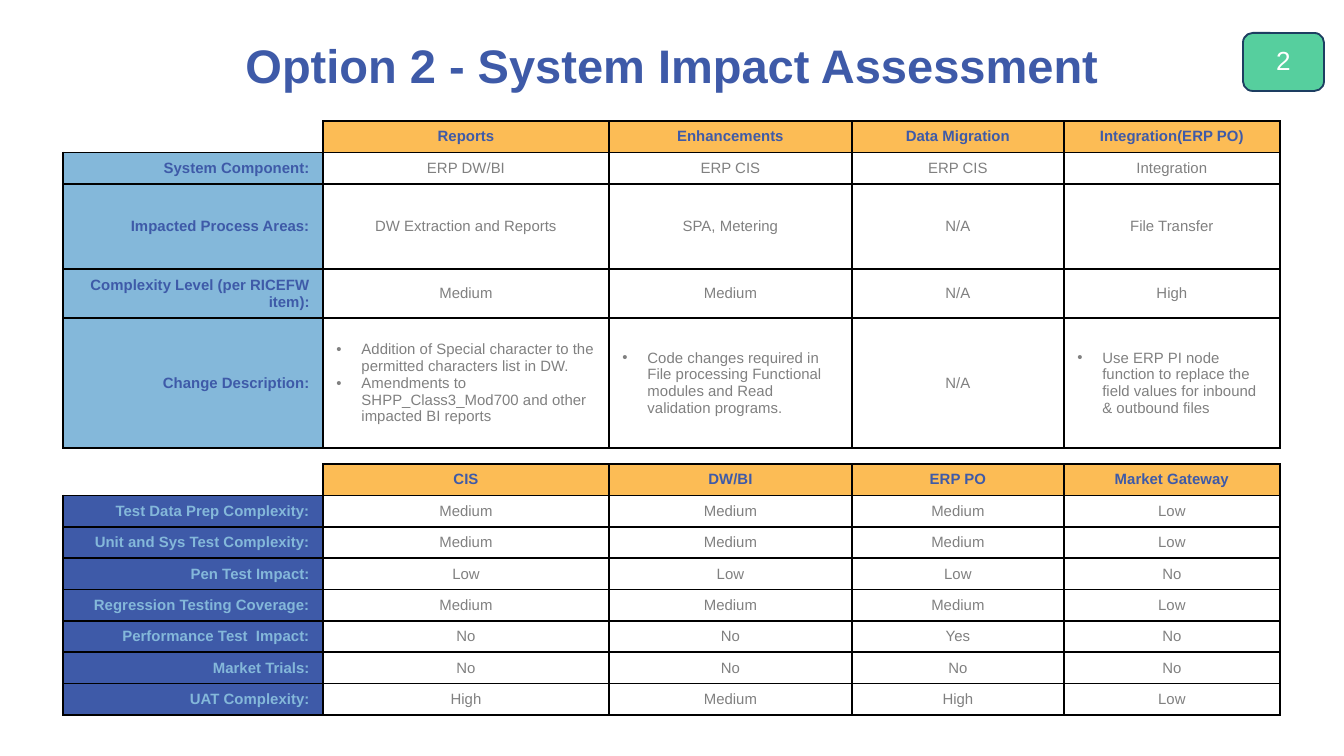
from lxml.etree import SubElement
from pptx import Presentation
from pptx.dml.color import RGBColor
from pptx.enum.shapes import MSO_SHAPE as Shape
from pptx.enum.text import MSO_ANCHOR as Anchor, PP_ALIGN as Align
from pptx.oxml.ns import qn
from pptx.util import Pt

PX = 6804
NAVY, SKY, AMBER, GREY = "3E5AA8", "84B8DA", "FCBC55", "808080"
HEADER = {"size": Pt(8), "bold": True, "color": NAVY}
SCOPE_LABEL = HEADER
TEST_LABEL = {**HEADER, "color": SKY}
BODY = {"size": Pt(8), "bold": False, "color": GREY}
COLUMNS = [260, 286, 243, 212, 216]
ROW = 31
SPACER = 16

SCOPE = [
    ["", "Reports", "Enhancements", "Data Migration", "Integration(ERP PO)"],
    ["System Component:", "ERP DW/BI", "ERP CIS", "ERP CIS", "Integration"],
    ["Impacted Process Areas:", "DW Extraction and Reports", "SPA, Metering", "N/A", "File Transfer"],
    ["Complexity Level (per RICEFW item):", "Medium", "Medium", "N/A", "High"],
    ["Change Description:",
     ["Addition of Special character to the permitted characters list in DW.",
      "Amendments to SHPP_Class3_Mod700 and other impacted BI reports"],
     ["Code changes required in File processing Functional modules and Read validation programs."],
     "N/A",
     ["Use ERP PI node function to replace the field values for inbound & outbound files"]],
]
SCOPE_HEIGHTS = [ROW, ROW, 85, 49, 130]
TESTING = [
    ["", "CIS", "DW/BI", "ERP PO", "Market Gateway"],
    ["Test Data Prep Complexity:", "Medium", "Medium", "Medium", "Low"],
    ["Unit and Sys Test Complexity:", "Medium", "Medium", "Medium", "Low"],
    ["Pen Test Impact:", "Low", "Low", "Low", "No"],
    ["Regression Testing Coverage:", "Medium", "Medium", "Medium", "Low"],
    ["Performance Test  Impact:", "No", "No", "Yes", "No"],
    ["Market Trials:", "No", "No", "No", "No"],
    ["UAT Complexity:", "High", "Medium", "High", "Low"],
]


def px(value):
    return value * PX


def color(value):
    return RGBColor.from_string(value)


def write(para, text, style, align):
    para.alignment = align
    span = para.add_run()
    span.text = text
    for name, value in {"name": "Arial", **style}.items():
        if name == "color":
            span.font.color.rgb = color(value)
        else:
            setattr(span.font, name, value)


def add_bullet(para):
    props = para._p.get_or_add_pPr()
    props.set("marL", str(px(25)))
    props.set("indent", str(px(-25)))
    SubElement(props, qn("a:buFont"), typeface="Arial")
    SubElement(props, qn("a:buChar"), char="•")


def set_borders(cell, sides):
    props = cell._tc.get_or_add_tcPr()
    for side in "LRTB":
        line = SubElement(props, qn(f"a:ln{side}"), w=str(Pt(1)))
        if side in sides:
            fill = SubElement(line, qn("a:solidFill"))
            SubElement(fill, qn("a:srgbClr"), val="000000")
        else:
            SubElement(line, qn("a:noFill"))


def fill_cell(cell, content, style, align, fill=None, sides="LRTB"):
    set_borders(cell, sides)
    if fill:
        cell.fill.solid()
        cell.fill.fore_color.rgb = color(fill)
    else:
        cell.fill.background()
    cell.vertical_anchor = Anchor.MIDDLE
    frame = cell.text_frame
    if isinstance(content, list):
        for index, item in enumerate(content):
            para = frame.add_paragraph() if index else frame.paragraphs[0]
            add_bullet(para)
            write(para, item, style, Align.LEFT)
    elif content:
        write(frame.paragraphs[0], content, style, align)
    else:
        SubElement(frame.paragraphs[0]._p, qn("a:endParaRPr"), sz="400")


def fill_section(table, first_row, rows, label_style, label_fill):
    for r, row in enumerate(rows):
        for c, content in enumerate(row):
            cell = table.cell(first_row + r, c)
            if r == 0 and c == 0:
                fill_cell(cell, "", BODY, Align.CENTER, sides="RB")
            elif r == 0:
                fill_cell(cell, content, HEADER, Align.CENTER, AMBER)
            elif c == 0:
                fill_cell(cell, content, label_style, Align.RIGHT, label_fill)
            else:
                fill_cell(cell, content, BODY, Align.CENTER)


def fill_spacer(table, row):
    for c in range(len(COLUMNS)):
        cell = table.cell(row, c)
        cell.margin_top = cell.margin_bottom = 0
        fill_cell(cell, "", BODY, Align.CENTER, sides="TB" if c else "T")


def add_assessment(page, left, top):
    heights = SCOPE_HEIGHTS + [SPACER] + [ROW] * len(TESTING)
    table = page.shapes.add_table(len(heights), len(COLUMNS), px(left), px(top),
                                  px(sum(COLUMNS)), px(sum(heights))).table
    table.first_row = table.horz_banding = False
    for column, width in zip(table.columns, COLUMNS):
        column.width = px(width)
    for row, height in zip(table.rows, heights):
        row.height = px(height)
    fill_section(table, 0, SCOPE, SCOPE_LABEL, SKY)
    fill_spacer(table, len(SCOPE))
    fill_section(table, len(SCOPE) + 1, TESTING, TEST_LABEL, NAVY)


def add_title(page, left, top, width, height):
    box = page.shapes.add_textbox(px(left), px(top), px(width), px(height))
    settings = {"word_wrap": True, "vertical_anchor": Anchor.MIDDLE,
                "margin_top": 0, "margin_bottom": 0}
    for name, value in settings.items():
        setattr(box.text_frame, name, value)
    write(box.text_frame.paragraphs[0], "Option 2 - System Impact Assessment",
          {"size": Pt(25.2), "bold": True, "color": NAVY}, Align.CENTER)


def add_badge(page, left, top, width, height):
    badge = page.shapes.add_shape(Shape.ROUNDED_RECTANGLE, px(left), px(top), px(width), px(height))
    badge.shadow.inherit = False
    badge.fill.solid()
    badge.fill.fore_color.rgb = color("56CF9E")
    badge.line.color.rgb = color("1D3E61")
    badge.line.width = Pt(1)
    badge.text_frame.vertical_anchor = Anchor.TOP
    badge.text_frame.margin_top = px(9)
    write(badge.text_frame.paragraphs[0], "2", {"size": Pt(14), "color": "FFFFFF"}, Align.CENTER)


def main():
    deck = Presentation()
    deck.slide_width, deck.slide_height = px(1344), px(756)
    page = deck.slides.add_slide(deck.slide_layouts[6])
    add_title(page, 67, 39, 1210, 52)
    add_badge(page, 1243, 33, 81, 58)
    add_assessment(page, 63, 121)
    deck.save("out.pptx")


if __name__ == "__main__":
    main()
